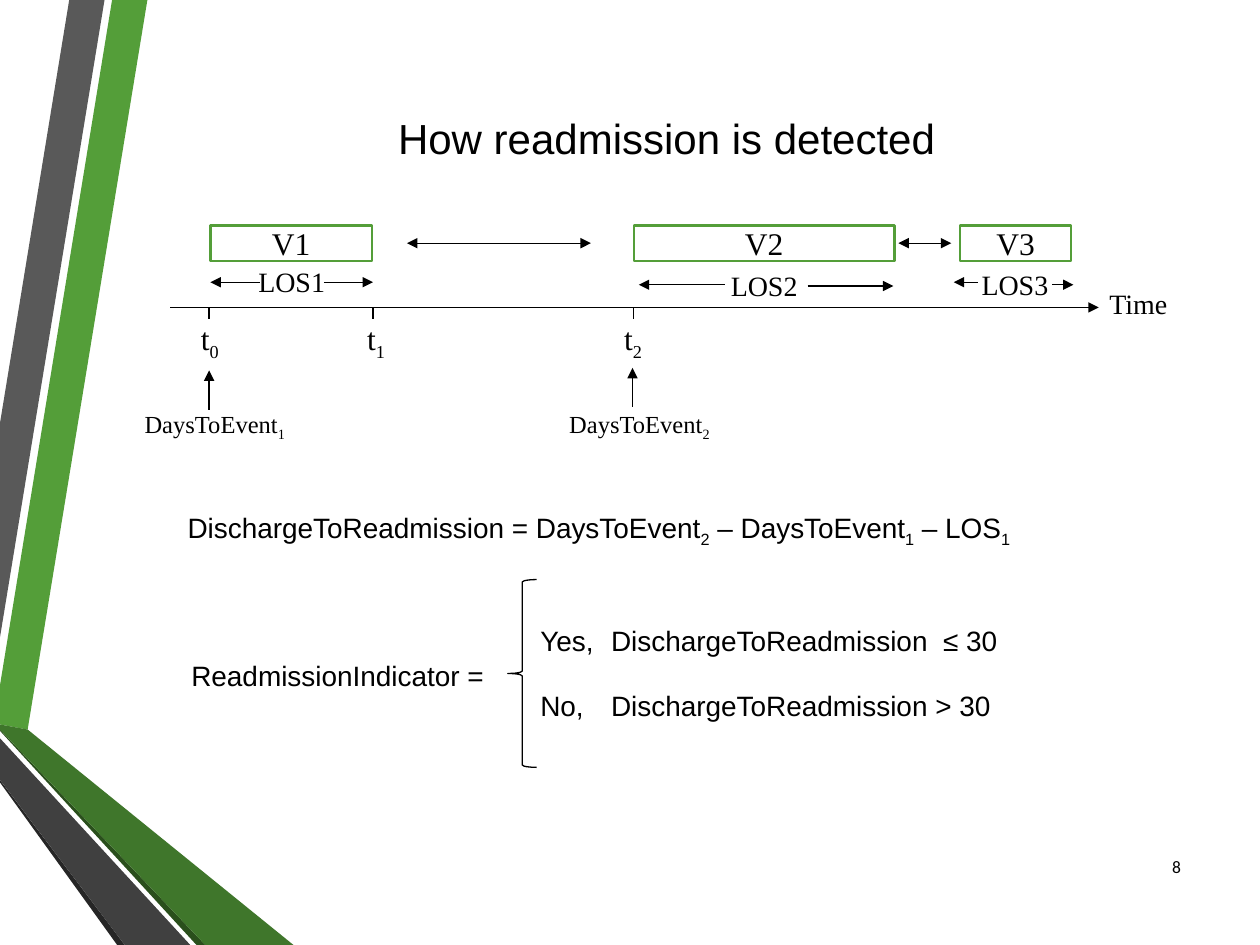
from pptx import Presentation
from pptx.dml.color import RGBColor
from pptx.enum import shapes, text
from pptx.oxml.ns import qn
from pptx.util import Inches, Pt
from lxml import etree

GREEN = RGBColor(0x54, 0x9E, 0x39)
DEEP_GREEN = RGBColor(0x3F, 0x76, 0x2B)
DARK_GREEN = RGBColor(0x2A, 0x4F, 0x1C)
GREY = RGBColor(0x59, 0x59, 0x59)
DARK_GREY = RGBColor(0x40, 0x40, 0x40)
CHARCOAL = RGBColor(0x26, 0x26, 0x26)
BLACK = RGBColor(0, 0, 0)
SERIF, SANS = "Times New Roman", "Arial"
CENTER, LEFT, RIGHT = text.PP_ALIGN.CENTER, text.PP_ALIGN.LEFT, text.PP_ALIGN.RIGHT


def write(p, content, size, font, align):
    """Write a paragraph in which every second part between bars is a subscript."""
    p.alignment = align
    for i, part in enumerate(content.split("|")):
        if part:
            r = p.add_run()
            r.text = part
            r.font.size, r.font.name = Pt(size), font
            r.font.color.rgb = BLACK
            if i % 2:
                r._r.get_or_add_rPr().set("baseline", "-25000")


def add_text(s, x, y, w, h, content, size, font=SERIF, align=CENTER):
    """Add a vertically centred text box and return its text frame."""
    tf = s.shapes.add_textbox(Inches(x), Inches(y), Inches(w), Inches(h)).text_frame
    tf.word_wrap = True
    tf.vertical_anchor = text.MSO_ANCHOR.MIDDLE
    write(tf.paragraphs[0], content, size, font, align)
    return tf


def add_line(s, x1, y1, x2, y2, *ends):
    """Add a thin black line with arrowheads at the named ends."""
    c = s.shapes.add_connector(shapes.MSO_CONNECTOR.STRAIGHT,
                               Inches(x1), Inches(y1), Inches(x2), Inches(y2))
    c.line.color.rgb, c.line.width = BLACK, Pt(0.75)
    ln = c.line._get_or_add_ln()
    for end in ends:
        etree.SubElement(ln, qn(f"a:{end}")).set("type", "triangle")
    etree.SubElement(c._element.spPr, qn("a:effectLst"))


def add_ribbons(s, x, y):
    """Draw the folded ribbons along the left edge."""
    ribbons = [
        (GREEN, [(0, 5.44), (0, 5.75), (0.22, 5.79), (1.17, 0), (0.89, 0)]),
        (GREY, [(0.83, 0), (0.55, 0), (0, 3.36), (0, 5.06)]),
        (CHARCOAL, [(0, 6.19), (0, 6.21), (0.93, 7.5), (0.99, 7.5)]),
        (DARK_GREEN, [(0, 5.79), (0, 5.8), (1.56, 7.5), (1.63, 7.5)]),
        (DEEP_GREEN, [(0, 5.79), (1.63, 7.5), (2.33, 7.5), (0.22, 5.79), (0, 5.75)]),
        (DARK_GREY, [(0, 6.19), (0.99, 7.5), (1.51, 7.5), (0, 5.86)]),
    ]
    for color, corners in ribbons:
        points = [(Inches(x + px), Inches(y + py)) for px, py in corners]
        builder = s.shapes.build_freeform(*points[0])
        builder.add_line_segments(points[1:], close=True)
        sp = builder.convert_to_shape()
        sp.shadow.inherit = False
        sp.fill.solid()
        sp.fill.fore_color.rgb = color
        sp.line.fill.background()


def add_title(s, x, y, w, h):
    """Place and format the title placeholder."""
    sp = s.shapes.title
    sp.left, sp.top, sp.width, sp.height = map(Inches, (x, y, w, h))
    tf = sp.text_frame
    tf.auto_size = text.MSO_AUTO_SIZE.SHAPE_TO_FIT_TEXT
    tf.vertical_anchor = text.MSO_ANCHOR.TOP
    write(tf.paragraphs[0], "How readmission is detected", 24, SANS, CENTER)


def add_visit(s, x, y, w, label):
    """Add the outlined bar of one visit."""
    sp = s.shapes.add_shape(shapes.MSO_SHAPE.RECTANGLE,
                            Inches(x), Inches(y), Inches(w), Inches(0.28))
    sp.shadow.inherit = False
    sp.fill.background()
    sp.line.color.rgb, sp.line.width = GREEN, Pt(1.25)
    sp.text_frame.vertical_anchor = text.MSO_ANCHOR.MIDDLE
    write(sp.text_frame.paragraphs[0], label, 18, SERIF, CENTER)


def add_timeline(s, x, y, w):
    """Draw the visits, their lengths of stay and the time axis."""
    for label, left, width in [("V1", 0.32, 1.28), ("V2", 3.68, 2.07), ("V3", 6.27, 0.88)]:
        add_visit(s, x + left, y, width, label)
    for start, end in [(1.88, 3.34), (5.78, 6.2)]:
        add_line(s, x + start, y + 0.14, x + end, y + 0.14, "headEnd", "tailEnd")

    stays = [("LOS1", 0.53, 0.3, (0.32, 0.71), (1.22, 1.61), 0.45, 0.45),
             ("LOS2", 4.28, 0.33, (3.72, 4.4), (5.06, 5.74), 0.47, 0.48),
             ("LOS3", 6.27, 0.32, (6.22, 6.41), (7.0, 7.17), 0.45, 0.47)]
    for label, left, top, (a, b), (c, d), y1, y2 in stays:
        add_text(s, x + left, y + top, 0.87, 0.29, label, 16)
        add_line(s, x + b, y + y1, x + a, y + y1, "tailEnd")
        add_line(s, x + c, y + y2, x + d, y + y2, "tailEnd")

    axis = y + 0.65
    add_line(s, x, axis, x + w, axis, "tailEnd")
    add_text(s, x + w - 0.12, axis - 0.18, 0.87, 0.29, "Time", 16)
    for i, (tick, left) in enumerate([(0.31, -0.12), (1.61, 1.2), (3.68, 3.24)]):
        add_line(s, x + tick, axis, x + tick, axis + 0.09)
        add_text(s, x + left, axis + 0.12, 0.87, 0.29, f"t|{i}", 18)
    for i, (arrow, top, left) in enumerate([(0.31, 0.5, -0.37), (3.67, 0.48, 3.0)], 1):
        add_line(s, x + arrow, axis + top + 0.31, x + arrow, axis + top, "tailEnd")
        add_text(s, x + left, axis + 0.67, 1.45, 0.54, f"DaysToEvent|{i}", 14)


def add_formulas(s, x, y):
    """Write the discharge formula and the bracketed indicator cases."""
    add_text(s, x, y, 7.78, 0.33,
             "DischargeToReadmission = DaysToEvent|2| – DaysToEvent|1| – LOS|1",
             16, SANS, LEFT)
    add_text(s, x + 0.03, y + 1.25, 2.77, 0.14, "ReadmissionIndicator =", 16, SANS, LEFT)

    brace = s.shapes.add_shape(shapes.MSO_SHAPE.LEFT_BRACE, Inches(x + 2.64),
                               Inches(y + 0.56), Inches(0.23), Inches(1.49))
    brace.shadow.inherit = False
    brace.fill.background()
    brace.line.color.rgb, brace.line.width = BLACK, Pt(0.75)

    tf = add_text(s, x + 2.8, y + 0.3, 4, 2,
                  "Yes,\t DischargeToReadmission  ≤ 30", 16, SANS, LEFT)
    p = tf.add_paragraph()
    write(p, "No,\t DischargeToReadmission > 30", 16, SANS, LEFT)
    p.space_before = Pt(18)
    for p in tf.paragraphs:
        tabs = etree.SubElement(p._p.get_or_add_pPr(), qn("a:tabLst"))
        etree.SubElement(tabs, qn("a:tab"), pos=str(Inches(0.5)), algn="l")


def main():
    """Build and save the slide."""
    prs = Presentation()
    prs.slide_width, prs.slide_height = Inches(10), Inches(7.5)
    s = prs.slides.add_slide(prs.slide_layouts[5])
    add_ribbons(s, 0, 0)
    add_title(s, 2.6, 0.84, 5.38, 0.5)
    add_timeline(s, 1.35, 1.79, 7.37)
    add_formulas(s, 1.39, 4.04)
    add_text(s, 9.02, 6.68, 0.45, 0.4, "8", 10, "Calibri", RIGHT)
    prs.save("out.pptx")


if __name__ == "__main__":
    main()
